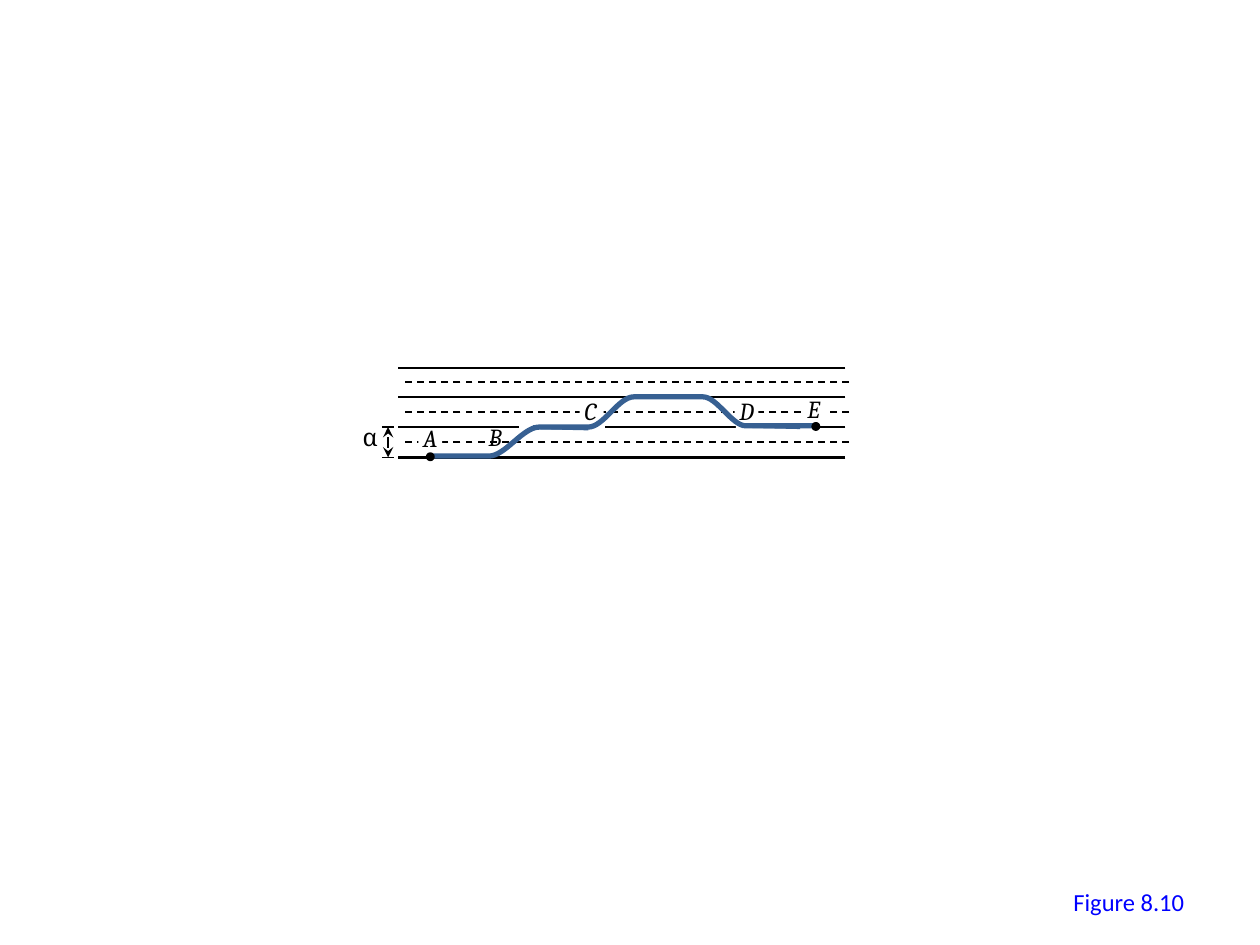
from lxml import etree
from pptx import Presentation
from pptx.dml.color import RGBColor
from pptx.enum.dml import MSO_LINE
from pptx.enum.shapes import MSO_CONNECTOR, MSO_SHAPE
from pptx.enum.text import MSO_AUTO_SIZE
from pptx.oxml.ns import qn
from pptx.util import Pt

PX = 9144  # 100 px to the inch
BLACK, WHITE, BLUE, ROUTE_BLUE = "000000", "FFFFFF", "0000FF", "376092"
rgb = RGBColor.from_string

# Four tracks, a third of 71 px apart, from the top one down
TRACKS = [292 + 71 * index // 3 for index in range(4)]
TOP, UPPER, MIDDLE, BOTTOM = TRACKS
TRACK_LEFT, TRACK_RIGHT, DASH_SHIFT = 316, 671, 3

presentation = Presentation()
presentation.slide_width, presentation.slide_height = 1000 * PX, 750 * PX
slide = presentation.slides.add_slide(presentation.slide_layouts[6])
shapes = slide.shapes


def add_line(x1, y1, x2, y2, color=BLACK, width=1.0):
    line = shapes.add_connector(
        MSO_CONNECTOR.STRAIGHT, x1 * PX, y1 * PX, x2 * PX, y2 * PX)
    line.line.color.rgb = rgb(color)
    line.line.width = Pt(width)
    etree.SubElement(line.element.spPr, qn("a:effectLst"))
    return line


def add_filled(kind, left, top, width, height, color):
    shape = shapes.add_shape(kind, left * PX, top * PX, width * PX, height * PX)
    shape.shadow.inherit = False
    shape.fill.solid()
    shape.fill.fore_color.rgb = rgb(color)
    shape.line.fill.background()
    return shape


# Solid tracks, and a dashed line midway between each pair
for y in TRACKS:
    add_line(TRACK_RIGHT, y, TRACK_LEFT, y, width=1.5)
for above, below in zip(TRACKS, TRACKS[1:]):
    y = (above + below) // 2
    dashes = add_line(TRACK_RIGHT + DASH_SHIFT, y, TRACK_LEFT + DASH_SHIFT, y)
    dashes.line.dash_style = MSO_LINE.DASH

# Track spacing α: a double arrow between two ticks
arrow_x, half_tick = 308, 5
arrow = add_line(arrow_x, BOTTOM, arrow_x, MIDDLE)
for end in ("a:headEnd", "a:tailEnd"):
    etree.SubElement(arrow.element.spPr.find(qn("a:ln")), qn(end), type="stealth")
for y in (MIDDLE, BOTTOM):
    add_line(arrow_x - half_tick, y, arrow_x + half_tick, y)

# White gaps where the route leaves or joins the middle track
for left in (412, 465, 584):
    add_filled(MSO_SHAPE.RECTANGLE, left, MIDDLE - 3, 15, 7, WHITE)

# White gaps in the dashed lines behind the point labels
points = {"A": (326, 331), "B": (378, 330), "C": (454, 309),
          "D": (577, 309), "E": (631, 308)}
for letter, (left, top) in points.items():
    if letter != "B":
        add_filled(MSO_SHAPE.RECTANGLE, left + 6, top + 16, 19, 6, WHITE)

# All text: point labels, the spacing symbol and the figure number
point_font = {"name": "Cambria", "italic": True}
texts = [(letter, left, top, 38, BLACK, point_font)
         for letter, (left, top) in points.items()]
texts += [("α", 278, 330, 33, BLACK, {"name": "Cambria"}),
          ("Figure 8.10", 842, 699, 108, BLUE, {"name": "Calibri"})]
for text, left, top, width, color, font_values in texts:
    box = shapes.add_textbox(left * PX, top * PX, width * PX, 34 * PX)
    box.text_frame.word_wrap = False
    box.text_frame.auto_size = MSO_AUTO_SIZE.SHAPE_TO_FIT_TEXT
    run = box.text_frame.paragraphs[0].add_run()
    run.text = text
    run.font.color.rgb = rgb(color)
    for name, value in {"size": Pt(14), **font_values}.items():
        setattr(run.font, name, value)

# Route: level stretches (from x, to x, y), joined by S-shaped ramps
stretches = [(342, 388, BOTTOM - 1), (428, 467, MIDDLE),
             (503, 558, UPPER), (592, 648, MIDDLE - 1)]
start_x, _, start_y = stretches[0]
route_points = []
for (_, ramp_start, y), (ramp_end, _, next_y) in zip(stretches, stretches[1:]):
    reach = (ramp_end - ramp_start) // 3
    route_points += [(ramp_start, y), (ramp_start + reach, y),
                     (ramp_end - reach, next_y), (ramp_end, next_y)]
_, end_x, end_y = stretches[-1]
route_points.append((end_x, end_y))

builder = shapes.build_freeform(start_x, start_y, scale=PX)
builder.add_line_segments(route_points, close=False)
route = builder.convert_to_shape()
route.shadow.inherit = False
route.fill.background()
route.line.color.rgb = rgb(ROUTE_BLUE)
route.line.width = Pt(3)

# Each level step is followed by three steps that become one Bézier ramp
steps = list(route.element.spPr.iter(qn("a:lnTo")))
for first, second, third in zip(steps[1::4], steps[2::4], steps[3::4]):
    first.tag = qn("a:cubicBezTo")
    for step in (second, third):
        first.append(step[0])
        step.getparent().remove(step)

# Thinner strokes along the two stretches on the middle track
for left, y in ((423, MIDDLE), (591, MIDDLE - 1)):
    add_line(left, y, left + 44, y + 1, ROUTE_BLUE, 2.25)

# Dots at both ends of the route
dot_size = 5
for x, y in ((end_x, end_y), (start_x, start_y)):
    dot = add_filled(MSO_SHAPE.OVAL, x - 3, y - 2, dot_size, dot_size, BLACK)
    dot.line.color.rgb = rgb(BLACK)
    dot.line.width = Pt(1.5)

presentation.save("out.pptx")
